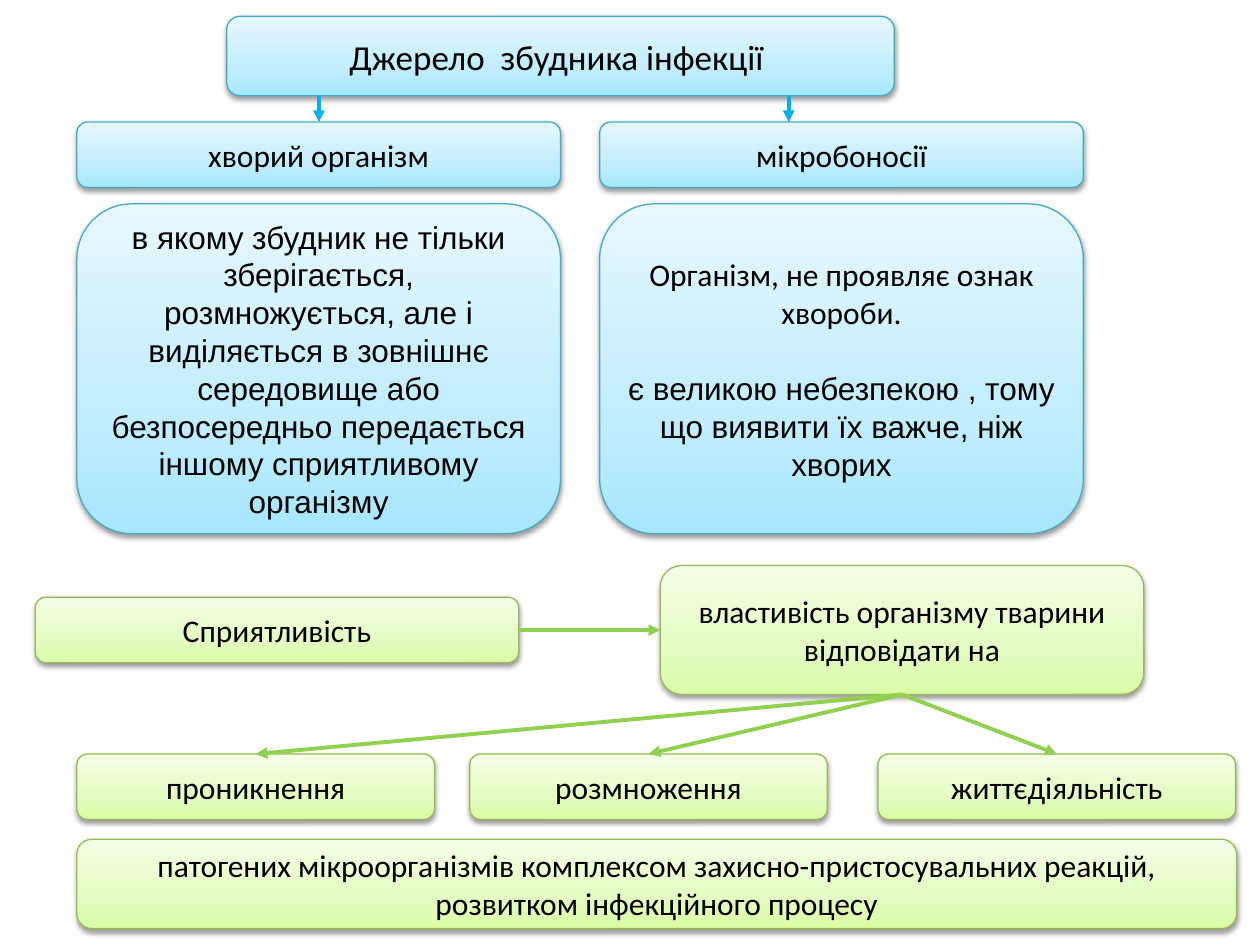
import copy

import lxml.etree
import pptx
import pptx.util
from pptx.dml.color import RGBColor
from pptx.enum.shapes import MSO_CONNECTOR, MSO_SHAPE
from pptx.enum.text import MSO_ANCHOR, MSO_AUTO_SIZE, PP_ALIGN
from pptx.oxml.ns import qn
from pptx.util import Cm, Pt

BLACK = RGBColor(0x00, 0x00, 0x00)
BLUE_ARROW = RGBColor(0x00, 0xB0, 0xF0)
GREEN_ARROW = RGBColor(0x92, 0xD0, 0x50)
BLUE_LINE = RGBColor(0x46, 0xAA, 0xC5)
GREEN_LINE = RGBColor(0x98, 0xB9, 0x55)
BLUE_STOPS = (RGBColor(0xA7, 0xE6, 0xFF), RGBColor(0xC1, 0xED, 0xFF), RGBColor(0xE7, 0xF8, 0xFF))
GREEN_STOPS = (RGBColor(0xDA, 0xFD, 0xA7), RGBColor(0xE4, 0xFC, 0xC2), RGBColor(0xF5, 0xFF, 0xE7))
BLUE = (BLUE_STOPS, BLUE_LINE)
GREEN = (GREEN_STOPS, GREEN_LINE)
STOP_POSITIONS = (0, 0.35, 1)

CARD_WIDTH, CARD_HEIGHT = 9.75, 1.32


def add_soft_shadow(shape):
    shape.shadow.inherit = False
    effects = shape.element.spPr.find(qn("a:effectLst"))
    shadow = lxml.etree.SubElement(
        effects, qn("a:outerShdw"), blurRad=str(Pt(3.1)), dist=str(Pt(1.6)),
        dir="5400000", rotWithShape="0")
    color = lxml.etree.SubElement(shadow, qn("a:srgbClr"), val=str(BLACK))
    lxml.etree.SubElement(color, qn("a:alpha"), val="38000")


def fill_gradient(shape, colors):
    """Fill from the first colour at the bottom to the last at the top."""
    shape.fill.gradient()
    shape.fill.gradient_angle = 90
    stop_list = shape.element.spPr.find(".//" + qn("a:gsLst"))
    stop_list.insert(1, copy.deepcopy(stop_list[0]))
    for stop, position, color in zip(shape.fill.gradient_stops, STOP_POSITIONS, colors):
        stop.position = position
        stop.color.rgb = color


def write_text(shape, paragraphs, size=18):
    """Write (text, font name) pairs as centred paragraphs, one line apart."""
    frame = shape.text_frame
    frame.word_wrap = True
    frame.auto_size = MSO_AUTO_SIZE.NONE
    frame.vertical_anchor = MSO_ANCHOR.MIDDLE
    for index, (text, font_name) in enumerate(paragraphs):
        paragraph = frame.add_paragraph() if index else frame.paragraphs[0]
        paragraph.text = text
        paragraph.alignment = PP_ALIGN.CENTER
        paragraph.space_before = Pt(22 if index else 0)
        paragraph.font.name = font_name
        paragraph.font.size = Pt(size)
        paragraph.font.color.rgb = BLACK


def add_card(slide, palette, left, top, width, height, *paragraphs):
    stops, line_color = palette
    shape = slide.shapes.add_shape(
        MSO_SHAPE.ROUNDED_RECTANGLE, Cm(left), Cm(top), Cm(width), Cm(height))
    fill_gradient(shape, stops)
    shape.line.color.rgb = line_color
    shape.line.width = Pt(0.75)
    add_soft_shadow(shape)
    if paragraphs:
        write_text(shape, paragraphs)


def add_arrow(slide, color, start, end):
    connector = slide.shapes.add_connector(
        MSO_CONNECTOR.STRAIGHT, *(Cm(length) for length in (*start, *end)))
    connector.line.color.rgb = color
    connector.line.width = Pt(2.25)
    lxml.etree.SubElement(connector.line._get_or_add_ln(), qn("a:tailEnd"), type="triangle")
    lxml.etree.SubElement(connector.element.spPr, qn("a:effectLst"))


def add_title(slide, left, top, width, height):
    add_card(slide, BLUE, left, top, width, height)
    title = slide.shapes.title
    title.left, title.top, title.width, title.height = (
        Cm(length) for length in (left, top, width, height))
    write_text(title, [("Джерело  збудника інфекції ", "Calibri")], size=20)
    slide.shapes.element.append(title.element)  # in front of its card


def add_source_region(slide, left, top):
    """Title card with the two kinds of source below it."""
    title_height, heads_top, details_top = 1.6, 2.13, 3.78
    add_title(slide, left + 3.02, top, 13.46, title_height)
    columns = [
        (0, 4.88, "хворий організм",
         [("в якому збудник не тільки зберігається, розмножується, але і виділяється "
           "в зовнішнє середовище або безпосередньо передається іншому сприятливому "
           "організму", "Arial")]),
        (10.54, 14.35, "мікробоносії",
         [("Організм, не проявляє ознак хвороби.", "Calibri"),
          ("є великою небезпекою , тому що виявити їх важче, ніж хворих", "Arial")]),
    ]
    for offset, arrow_offset, head, details in columns:
        arrow_x = left + arrow_offset
        add_arrow(slide, BLUE_ARROW, (arrow_x, top + title_height), (arrow_x, top + heads_top))
        add_card(slide, BLUE, left + offset, top + heads_top, CARD_WIDTH, CARD_HEIGHT,
                 (head, "Calibri"))
        add_card(slide, BLUE, left + offset, top + details_top, CARD_WIDTH, 6.65, *details)


def add_susceptibility_region(slide, left, top):
    """Term, its definition, and the three processes it responds to."""
    definition_left, definition_height = left + 12.6, 2.6
    middle = top + definition_height / 2
    add_card(slide, GREEN, left, middle - CARD_HEIGHT / 2, CARD_WIDTH, CARD_HEIGHT,
             ("Сприятливість", "Calibri"))
    add_card(slide, GREEN, definition_left, top, CARD_WIDTH, definition_height,
             ("властивість організму тварини відповідати на", "Calibri"))
    add_arrow(slide, GREEN_ARROW, (left + CARD_WIDTH, middle), (definition_left, middle))

    process_top, process_width = top + 3.8, 7.21
    fan_start = (definition_left + CARD_WIDTH / 2, top + definition_height)
    processes = [(0.84, "проникнення"), (8.76, "розмноження"), (16.99, "життєдіяльність")]
    for offset, text in processes:
        add_card(slide, GREEN, left + offset, process_top, process_width, CARD_HEIGHT,
                 (text, "Calibri"))
    for offset, _ in processes:
        add_arrow(slide, GREEN_ARROW, fan_start,
                  (left + offset + process_width / 2, process_top))
    add_card(slide, GREEN, left + 0.84, top + 5.52, 23.38, 1.8,
             ("патогених мікроорганізмів комплексом захисно-пристосувальних реакцій, "
              "розвитком інфекційного процесу", "Calibri"))


def main():
    presentation = pptx.Presentation()
    presentation.slide_width = Cm(25.4)
    presentation.slide_height = Cm(19.05)
    slide = presentation.slides.add_slide(presentation.slide_layouts.get_by_name("Title Only"))
    add_source_region(slide, 1.55, 0.33)
    add_susceptibility_region(slide, 0.71, 11.4)
    presentation.save("out.pptx")


if __name__ == "__main__":
    main()
